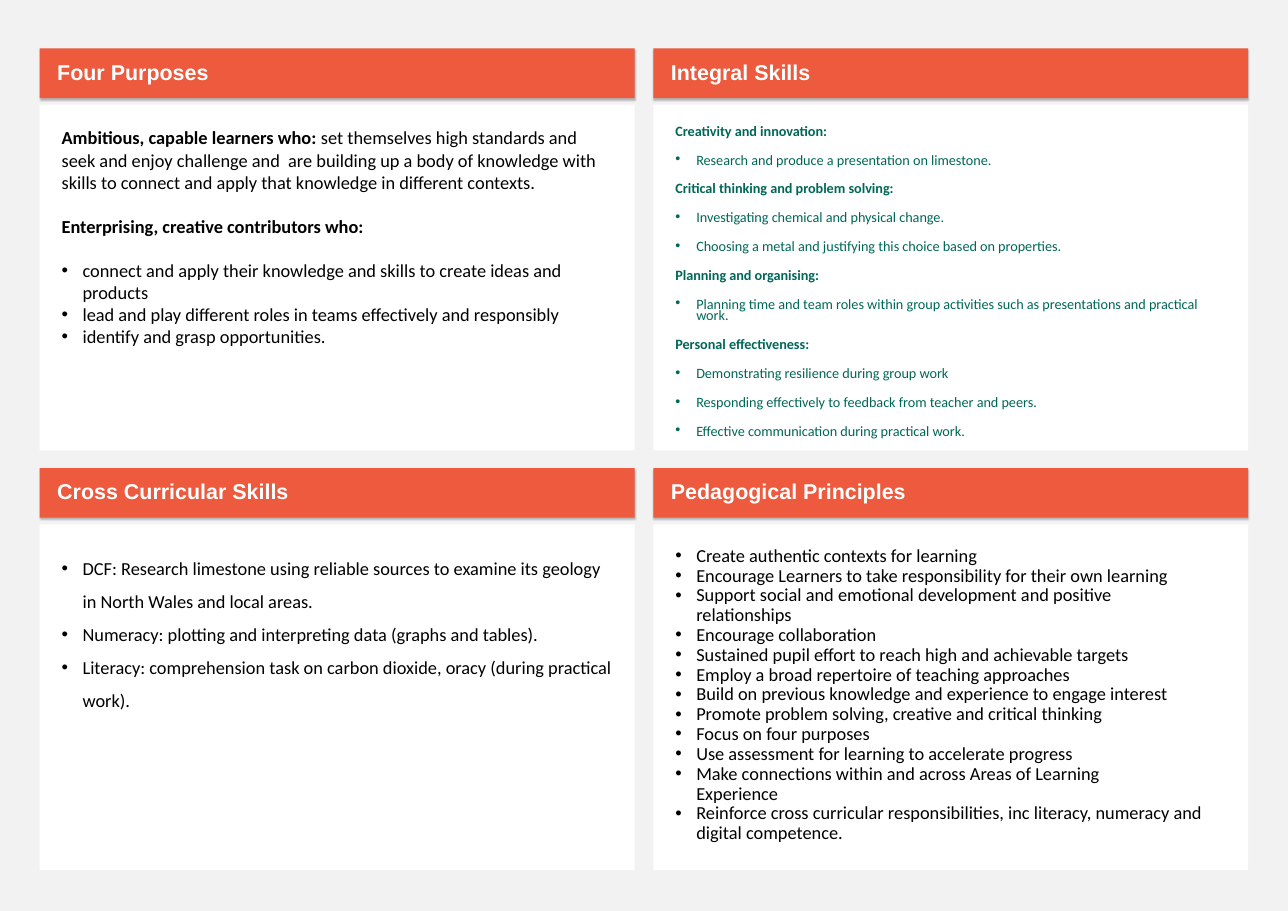
"""Build a slide of four titled panels on curriculum purposes, skills and principles."""
from lxml.etree import SubElement
from pptx import Presentation
from pptx.dml.color import RGBColor
from pptx.enum.shapes import MSO_SHAPE
from pptx.enum.text import MSO_ANCHOR, PP_ALIGN
from pptx.oxml.ns import qn
from pptx.util import Inches, Pt

HEAD, BULLET = "head", "bullet"

PANELS = [
    {"title": "Four Purposes", "style": "purposes", "lines": [
        (HEAD, "Ambitious, capable learners who: ",
         "set themselves high standards and seek and enjoy challenge and  are building up "
         "a body of knowledge with skills to connect and apply that knowledge in different contexts."),
        (HEAD, "Enterprising, creative contributors who:"),
        (BULLET, "connect and apply their knowledge and skills to create ideas and products"),
        (BULLET, "lead and play different roles in teams effectively and responsibly"),
        (BULLET, "identify and grasp opportunities."),
    ]},
    {"title": "Integral Skills", "style": "skills", "lines": [
        (HEAD, "Creativity and innovation:"),
        (BULLET, "Research and produce a presentation on limestone."),
        (HEAD, "Critical thinking and problem solving:"),
        (BULLET, "Investigating chemical and physical change."),
        (BULLET, "Choosing a metal and justifying this choice based on properties."),
        (HEAD, "Planning and organising:"),
        (BULLET, "Planning time and team roles within group activities such as presentations and practical work."),
        (HEAD, "Personal effectiveness:"),
        (BULLET, "Demonstrating resilience during group work"),
        (BULLET, "Responding effectively to feedback from teacher and peers."),
        (BULLET, "Effective communication during practical work."),
    ]},
    {"title": "Cross Curricular Skills", "style": "curricular", "lines": [
        (BULLET, "DCF: Research limestone using reliable sources to examine its geology in North Wales and local areas."),
        (BULLET, "Numeracy: plotting and interpreting data (graphs and tables)."),
        (BULLET, "Literacy: comprehension task on carbon dioxide, oracy (during practical work)."),
    ]},
    {"title": "Pedagogical Principles", "style": "principles", "lines": [
        (BULLET, "Create authentic contexts for learning"),
        (BULLET, "Encourage Learners to take responsibility for their own learning"),
        (BULLET, "Support social and emotional development and positive \vrelationships"),
        (BULLET, "Encourage collaboration"),
        (BULLET, "Sustained pupil effort to reach high and achievable targets"),
        (BULLET, "Employ a broad repertoire of teaching approaches"),
        (BULLET, "Build on previous knowledge and experience to engage interest"),
        (BULLET, "Promote problem solving, creative and critical thinking"),
        (BULLET, "Focus on four purposes"),
        (BULLET, "Use assessment for learning to accelerate progress"),
        (BULLET, "Make connections within and across Areas of Learning \vExperience"),
        (BULLET, "Reinforce cross curricular responsibilities, inc literacy, numeracy and digital competence."),
    ]},
]

THEME = {
    "page": "F2F2F2", "panel": "FFFFFF", "band": "ED5A3E",
    "title": {"font": "Arial", "size": 14, "color": "FFFFFF", "spacing": 0.9},
    "purposes": {"font": "Calibri", "size": 12, "color": "000000", "spacing": 1.0, "head_gap": 14.4, "gap": 0},
    "skills": {"font": "Calibri", "size": 9.3, "color": "006758", "spacing": 0.7, "head_gap": 11, "gap": 11},
    "curricular": {"font": "Calibri", "size": 12, "color": "000000", "spacing": 1.5, "head_gap": 0, "gap": 0},
    "principles": {"font": "Calibri", "size": 12, "color": "000000", "spacing": 0.9, "head_gap": 0, "gap": 0},
}

LEFT, TOP, COLUMN_STEP, ROW_STEP = 0.36, 0.44, 5.57, 3.81
WIDTH, BAND_HEIGHT, BODY_OFFSET, BODY_HEIGHT = 5.4, 0.45, 0.51, 3.14
INDENT = 0.19


def add_box(page, left, top, height, color, margins, anchor):
    box = page.shapes.add_shape(MSO_SHAPE.RECTANGLE, Inches(left), Inches(top), Inches(WIDTH), Inches(height))
    box.shadow.inherit = False
    box.fill.solid()
    box.fill.fore_color.rgb = RGBColor.from_string(color)
    box.line.fill.background()
    frame = box.text_frame
    frame.word_wrap = True
    frame.vertical_anchor = anchor
    frame.margin_left, frame.margin_top, frame.margin_right, frame.margin_bottom = map(Inches, margins)
    return box


def add_band_shadow(box):
    effects = box._element.spPr.find(qn("a:effectLst"))
    shadow = SubElement(effects, qn("a:outerShdw"), blurRad="12700", dist="12700", dir="5400000")
    color = SubElement(shadow, qn("a:srgbClr"), val="000000")
    SubElement(color, qn("a:alpha"), val="25000")


def add_span(para, text, style, bold):
    span = para.add_run()
    span.text = text
    format_span(span, style, bold)


def format_span(span, style, bold):
    span.font.name = style["font"]
    span.font.size = Pt(style["size"])
    span.font.bold = bold
    span.font.color.rgb = RGBColor.from_string(style["color"])


def set_bullet(para):
    properties = para._p.get_or_add_pPr()
    properties.set("marL", str(Inches(INDENT)))
    properties.set("indent", str(Inches(-INDENT)))
    SubElement(properties, qn("a:buFont"), typeface="Arial")
    SubElement(properties, qn("a:buChar"), char="•")


def write_line(para, kind, text, rest, style, gap):
    para.text = text
    para.alignment = PP_ALIGN.LEFT
    para.line_spacing = style["spacing"]
    para.space_before = Pt(gap)
    for span in para.runs:
        format_span(span, style, kind == HEAD)
    if rest:
        add_span(para, rest, style, False)
    if kind == BULLET:
        set_bullet(para)


def add_panel(page, panel, left, top):
    band = add_box(page, left, top, BAND_HEIGHT, THEME["band"], (0.16, 0.05, 0.1, 0.05), MSO_ANCHOR.MIDDLE)
    add_band_shadow(band)
    write_line(band.text_frame.paragraphs[0], HEAD, panel["title"], "", THEME["title"], 0)

    body = add_box(page, left, top + BODY_OFFSET, BODY_HEIGHT, THEME["panel"], (0.2,) * 4, MSO_ANCHOR.TOP)
    frame, style, previous = body.text_frame, THEME[panel["style"]], None
    for kind, text, *rest in panel["lines"]:
        para = frame.add_paragraph() if previous else frame.paragraphs[0]
        gap = style["head_gap"] if HEAD in (kind, previous) else style["gap"]
        write_line(para, kind, text, "".join(rest), style, gap if previous else 0)
        previous = kind


def main():
    deck = Presentation()
    deck.slide_width, deck.slide_height = Inches(11.69), Inches(8.27)
    page = deck.slides.add_slide(deck.slide_layouts[6])
    page.background.fill.solid()
    page.background.fill.fore_color.rgb = RGBColor.from_string(THEME["page"])
    for index, panel in enumerate(PANELS):
        row, column = divmod(index, 2)
        add_panel(page, panel, LEFT + column * COLUMN_STEP, TOP + row * ROW_STEP)
    deck.save("out.pptx")


if __name__ == "__main__":
    main()
